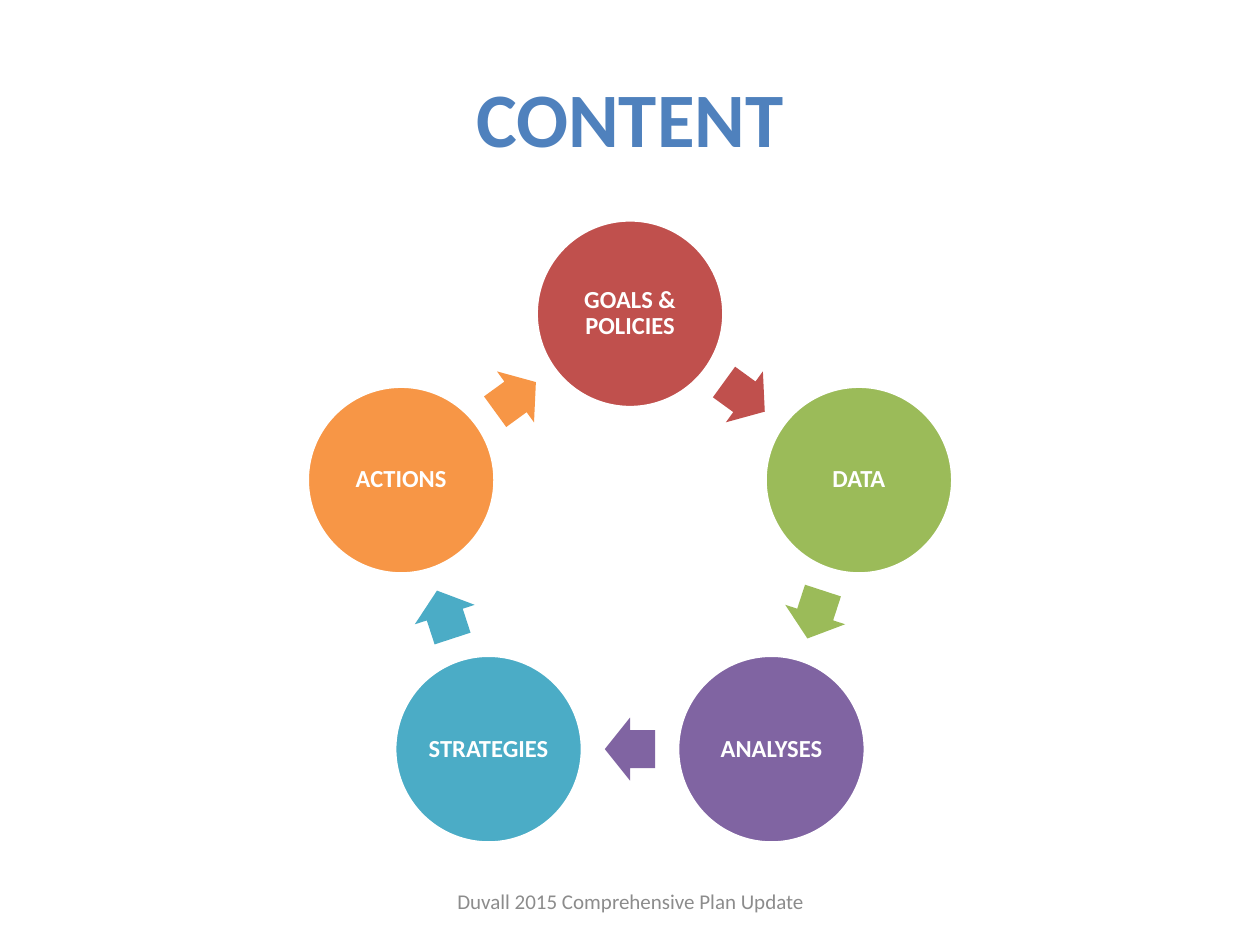
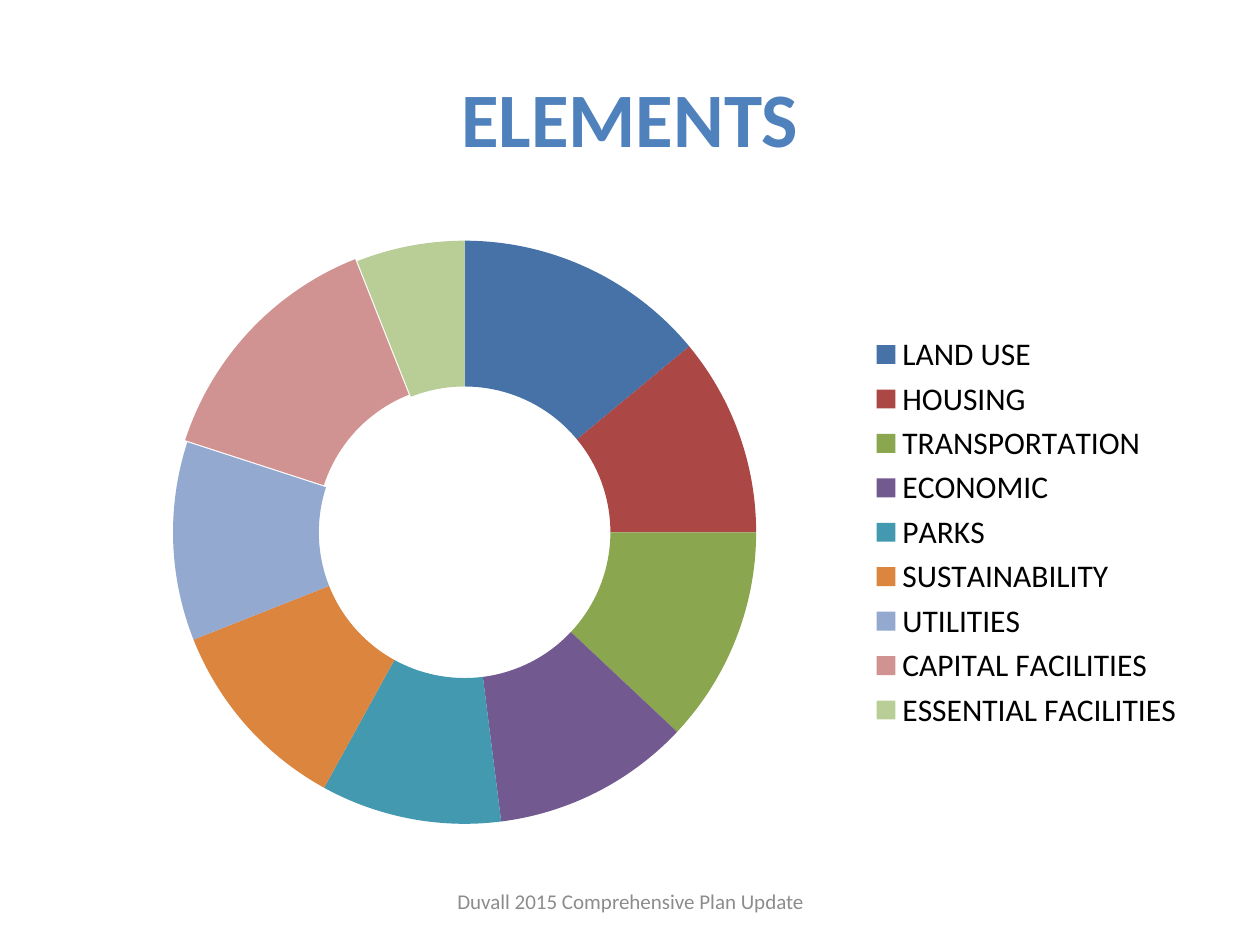
from dataclasses import dataclass
from math import cos, pi, sin

from lxml.etree import SubElement
from pptx import Presentation
from pptx.chart.data import CategoryChartData
from pptx.dml.color import RGBColor
from pptx.enum.chart import XL_CHART_TYPE, XL_LEGEND_POSITION
from pptx.enum.shapes import MSO_SHAPE
from pptx.enum.text import MSO_ANCHOR, PP_ALIGN
from pptx.oxml.ns import qn
from pptx.util import Inches, Pt


@dataclass(frozen=True)
class Theme:
    font: str = "Calibri"
    title: str = "4F81BD"
    footer: str = "8C8C8C"
    white: str = "FFFFFF"
    black: str = "000000"
    title_size: int = 44
    legend_size: int = 18
    label_size: int = 14
    footer_size: int = 12


FOOTER = "Duvall 2015 Comprehensive Plan Update"

# Steps run clockwise from the top
CYCLE = [
    ("GOALS & POLICIES", "C0504D"),
    ("DATA", "9BBB59"),
    ("ANALYSES", "8064A2"),
    ("STRATEGIES", "4BACC6"),
    ("ACTIONS", "F79646"),
]

ELEMENTS = [
    ("LAND USE", 14, "4672A8"),
    ("HOUSING", 11, "AB4744"),
    ("TRANSPORTATION", 12, "8AA64F"),
    ("ECONOMIC", 11, "725990"),
    ("PARKS", 10, "4299B0"),
    ("SUSTAINABILITY", 11, "DC853E"),
    ("UTILITIES", 11, "93A9CF"),
    ("CAPITAL FACILITIES", 14, "D19392"),
    ("ESSENTIAL FACILITIES", 6, "B9CD96"),
]
PULLED_OUT = "CAPITAL FACILITIES"


class SlideBuilder:
    def __init__(self, deck, theme):
        self.deck = deck
        self.theme = theme
        self.page = None

    def style_font(self, font, size, color, bold=False):
        values = {"name": self.theme.font, "size": Pt(size), "bold": bold}
        for name, value in values.items():
            setattr(font, name, value)
        font.color.rgb = RGBColor.from_string(color)

    def put_text(self, box, text, size, color, bold=False, inset=None, spacing=None):
        frame = box.text_frame
        values = {"word_wrap": True, "vertical_anchor": MSO_ANCHOR.MIDDLE}
        if inset is not None:
            sides = ("left", "top", "right", "bottom")
            values.update({f"margin_{side}": Inches(inset) for side in sides})
        for name, value in values.items():
            setattr(frame, name, value)
        para = frame.paragraphs[0]
        para.alignment = PP_ALIGN.CENTER
        para.line_spacing = spacing
        span = para.add_run()
        span.text = text
        self.style_font(span.font, size, color, bold)

    def new_page(self, title):
        theme = self.theme
        self.page = self.deck.slides.add_slide(self.deck.slide_layouts[5])
        heading = self.page.shapes.title
        place = {"left": 0.5, "top": 0.3, "width": 9, "height": 1.25}
        for name, value in place.items():
            setattr(heading, name, Inches(value))
        self.put_text(heading, title, theme.title_size, theme.title, bold=True)
        footer = self.page.shapes.add_textbox(
            Inches(3.42), Inches(6.95), Inches(3.17), Inches(0.4))
        self.put_text(footer, FOOTER, theme.footer_size, theme.footer)

    def centred_shape(self, kind, x, y, width, height, color):
        shape = self.page.shapes.add_shape(
            kind, Inches(x - width / 2), Inches(y - height / 2),
            Inches(width), Inches(height))
        shape.shadow.inherit = False
        shape.fill.solid()
        shape.fill.fore_color.rgb = RGBColor.from_string(color)
        return shape

    def circle(self, x, y, text, color):
        theme = self.theme
        circle = self.centred_shape(MSO_SHAPE.OVAL, x, y, 1.49, 1.49, color)
        circle.line.color.rgb = RGBColor.from_string(theme.white)
        circle.line.width = Pt(2)
        self.put_text(circle, text, theme.label_size, theme.white, bold=True,
                      inset=0.02, spacing=0.9)

    def arrow(self, x, y, rotation, color):
        arrow = self.centred_shape(MSO_SHAPE.RIGHT_ARROW, x, y, 0.4, 0.5, color)
        arrow.line.fill.background()
        arrow.adjustments[0] = 0.6
        arrow.adjustments[1] = 0.5
        arrow.rotation = rotation

    def cycle(self, steps, center_x, center_y, radius):
        turn = 2 * pi / len(steps)
        arrow_radius = radius * cos(turn / 2)
        for index, (text, color) in enumerate(steps):
            angle = index * turn
            self.circle(center_x + radius * sin(angle),
                        center_y - radius * cos(angle), text, color)
            # Each arrow sits midway between two circles
            middle = angle + turn / 2
            self.arrow(center_x + arrow_radius * sin(middle),
                       center_y - arrow_radius * cos(middle),
                       middle * 180 / pi, color)

    def doughnut(self, rows, pulled_out):
        theme = self.theme
        data = CategoryChartData()
        data.categories = [name for name, _, _ in rows]
        data.add_series("Series 1", [value for _, value, _ in rows])
        chart = self.page.shapes.add_chart(
            XL_CHART_TYPE.DOUGHNUT, Inches(0.5), Inches(1.75),
            Inches(9), Inches(4.95), data).chart
        chart.has_title = False
        self.style_font(chart.font, theme.legend_size, theme.black)
        chart.has_legend = True
        chart.legend.position = XL_LEGEND_POSITION.RIGHT
        chart.legend.include_in_layout = False

        plot = chart.plots[0]
        plot.vary_by_categories = True
        series = plot.series[0]
        for index, (name, _, color) in enumerate(rows):
            point_format = series.points[index].format
            point_format.fill.solid()
            point_format.fill.fore_color.rgb = RGBColor.from_string(color)
            point_format.line.fill.background()
            if name == pulled_out:
                point = series._element.findall(qn("c:dPt"))[index]
                explosion = SubElement(point, qn("c:explosion"), val="2")
                point.find(qn("c:spPr")).addprevious(explosion)


def main():
    deck = Presentation()
    deck.slide_width = Inches(10)
    deck.slide_height = Inches(7.5)
    builder = SlideBuilder(deck, Theme())

    # Planning cycle
    builder.new_page("CONTENT")
    builder.cycle(CYCLE, center_x=5, center_y=4.4, radius=1.91)

    # Plan elements
    builder.new_page("ELEMENTS")
    builder.doughnut(ELEMENTS, PULLED_OUT)

    deck.save("out.pptx")


if __name__ == "__main__":
    main()
